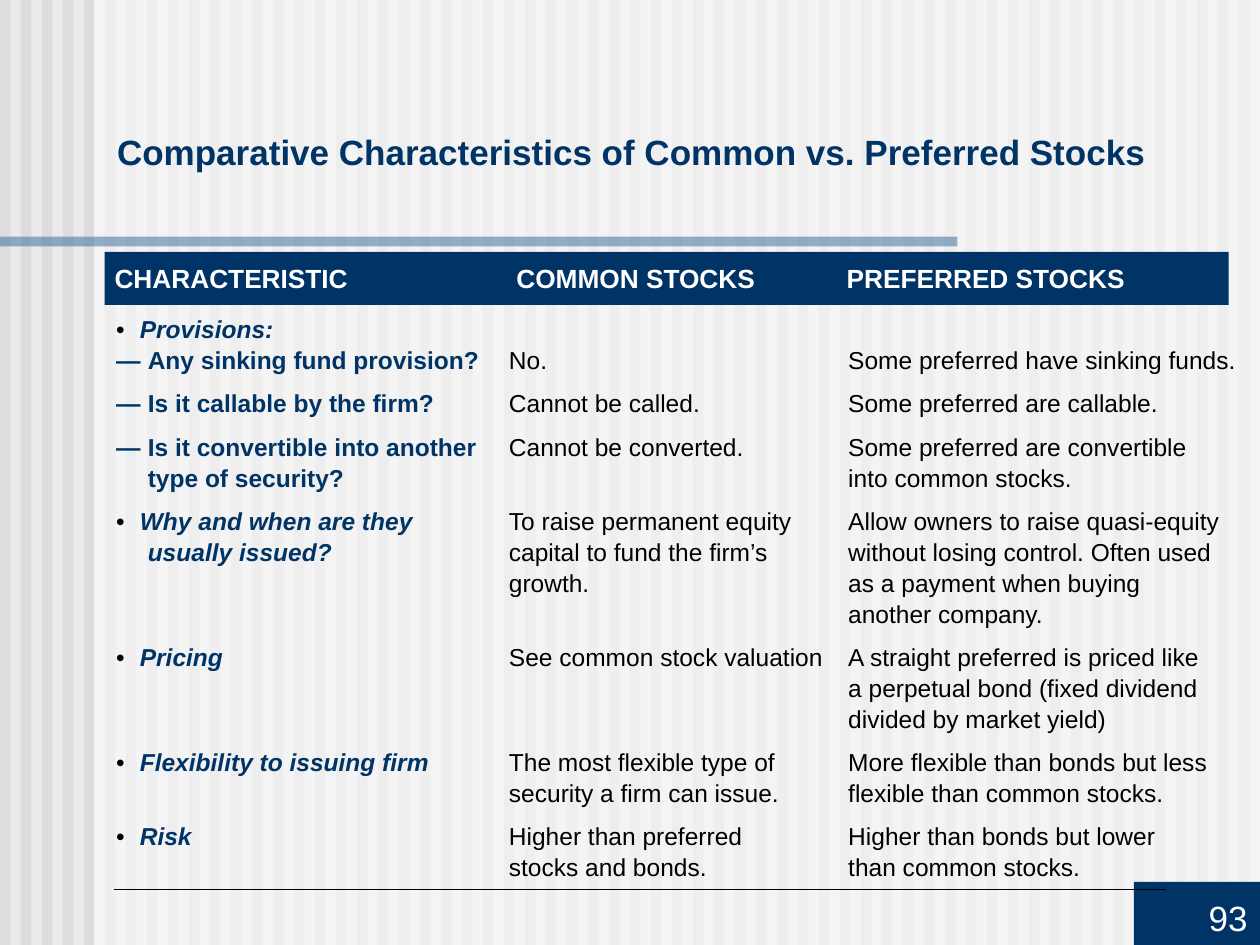
from itertools import zip_longest
from lxml import etree
from pptx import Presentation, util as u
from pptx.dml.color import RGBColor
from pptx.enum import shapes, text
from pptx.oxml.ns import qn

NAVY, STEEL, WHITE, BLACK = "003366", "336699", "FFFFFF", "000000"
WIDTH, HEIGHT = 25.4, 19.05
STRIPE_COUNT = 60

TITLE = "Comparative Characteristics of Common vs. Preferred Stocks"
PAGE_NUMBER = "93"
HEADINGS = ["CHARACTERISTIC", "COMMON STOCKS", "PREFERRED STOCKS"]
HEADING_TABS = [8.1, 14.76]
BODY_TABS = [0.48, 0.64, 7.92, 14.76]

# mark, characteristic, common stocks, preferred stocks; one string a line
ROWS = [
    ("•", ["Provisions:"], [], []),
    ("—", ["Any sinking fund provision?"], ["No."],
     ["Some preferred have sinking funds."]),
    ("—", ["Is it callable by the firm?"], ["Cannot be called."],
     ["Some preferred are callable."]),
    ("—", ["Is it convertible into another", "type of security?"],
     ["Cannot be converted."],
     ["Some preferred are convertible", "into common stocks."]),
    ("•", ["Why and when are they", "usually issued?"],
     ["To raise permanent equity", "capital to fund the firm’s", "growth."],
     ["Allow owners to raise quasi-equity", "without losing control. Often used",
      "as a payment when buying", "another company."]),
    ("•", ["Pricing"], ["See common stock valuation"],
     ["A straight preferred is priced like", "a perpetual bond (fixed dividend",
      "divided by market yield)"]),
    ("•", ["Flexibility to issuing firm"],
     ["The most flexible type of", "security a firm can issue."],
     ["More flexible than bonds but less", "flexible than common stocks."]),
    ("•", ["Risk"], ["Higher than preferred", "stocks and bonds."],
     ["Higher than bonds but lower", "than common stocks."]),
]


def color(value):
    return RGBColor.from_string(value)


def add_bar(slide, left, top, width, height, fill, alpha=None):
    bar = slide.shapes.add_shape(shapes.MSO_SHAPE.RECTANGLE, u.Cm(left), u.Cm(top),
                                 u.Cm(width), u.Cm(height))
    bar.shadow.inherit = False
    bar.fill.solid()
    bar.fill.fore_color.rgb = color(fill)
    bar.line.fill.background()
    if alpha is not None:
        rgb = bar._element.spPr.find(qn("a:solidFill")).find(qn("a:srgbClr"))
        etree.SubElement(rgb, qn("a:alpha"), val=str(alpha * 1000))
    return bar


def add_text_frame(slide, left, top, width, height, margin=0):
    box = slide.shapes.add_textbox(u.Cm(left), u.Cm(top), u.Cm(width), u.Cm(height))
    frame = box.text_frame
    frame.word_wrap = True
    frame.margin_left = frame.margin_right = u.Cm(margin)
    frame.margin_top = frame.margin_bottom = u.Cm(margin / 2)
    return frame


def set_tabs(paragraph, stops):
    tab_list = etree.SubElement(paragraph._p.get_or_add_pPr(), qn("a:tabLst"))
    for stop in stops:
        etree.SubElement(tab_list, qn("a:tab"), pos=str(u.Cm(stop)), algn="l")


def set_font(paragraph, size, fill, bold=False):
    font = paragraph.font
    font.name, font.size, font.bold = "Arial", u.Pt(size), bold
    font.color.rgb = color(fill)


def add_background(slide):
    slide.background.fill.solid()
    slide.background.fill.fore_color.rgb = color("EAEAEA")
    pitch = WIDTH / STRIPE_COUNT
    for i in range(STRIPE_COUNT):
        add_bar(slide, i * pitch, 0, pitch / 2, HEIGHT, "DDDDDD")
    add_bar(slide, 1.9, 0, WIDTH - 1.9, HEIGHT, WHITE, alpha=50)
    add_bar(slide, 0, 4.77, 19.3, 0.2, STEEL, alpha=50)


def add_page_number(slide):
    frame = add_bar(slide, 22.86, 17.78, 2.54, 1.27, NAVY).text_frame
    frame.vertical_anchor = text.MSO_ANCHOR.BOTTOM
    paragraph = frame.paragraphs[0]
    paragraph.text = PAGE_NUMBER
    paragraph.alignment = text.PP_ALIGN.RIGHT
    set_font(paragraph, 20, WHITE)


def add_comparison(slide):
    frame = add_text_frame(slide, 2.34, 6.3, 22.86, 11.13)
    paragraph = frame.paragraphs[0]
    previous_answered = False
    for mark, *columns in ROWS:
        for i, (label, common, preferred) in enumerate(zip_longest(*columns, fillvalue="")):
            if paragraph is None:
                paragraph = frame.add_paragraph()
            paragraph.line_spacing = 1.05
            if i == 0 and previous_answered:
                paragraph.space_before = u.Pt(7.2)
            set_tabs(paragraph, BODY_TABS)
            set_font(paragraph, 14, BLACK)
            lead = paragraph.add_run()
            lead.text = "\t\t" if i else mark + "\t"
            if mark == "—":
                lead.font.bold = True
                lead.font.color.rgb = color(NAVY)
            if label:
                run = paragraph.add_run()
                run.text = label
                run.font.bold = True
                run.font.italic = mark == "•"
                run.font.color.rgb = color(NAVY)
            answers = f"\t{common}\t{preferred}".rstrip()
            if answers:
                paragraph.add_run().text = answers
            paragraph = None
        previous_answered = bool(columns[1])


def add_headings(slide):
    add_bar(slide, 2.11, 5.08, 22.66, 1.07, NAVY)
    paragraph = add_text_frame(slide, 2.31, 5.28, 22.25, 0.64).paragraphs[0]
    paragraph.text = "\t".join(HEADINGS)
    set_tabs(paragraph, HEADING_TABS)
    set_font(paragraph, 15, WHITE, bold=True)


def add_title(slide):
    frame = add_text_frame(slide, 2.11, 2.51, 22.68, 1.09, margin=0.25)
    frame.vertical_anchor = text.MSO_ANCHOR.BOTTOM
    paragraph = frame.paragraphs[0]
    paragraph.text = TITLE
    set_font(paragraph, 20, NAVY, bold=True)


def add_footer_line(slide):
    line = slide.shapes.add_connector(shapes.MSO_CONNECTOR.STRAIGHT, u.Cm(2.29),
                                      u.Cm(17.93), u.Cm(23.5), u.Cm(17.93))
    line.line.color.rgb = color(BLACK)
    line.line.width = u.Pt(0.75)
    etree.SubElement(line._element.spPr, qn("a:effectLst"))


def main():
    presentation = Presentation()
    presentation.slide_width, presentation.slide_height = u.Cm(WIDTH), u.Cm(HEIGHT)
    slide = presentation.slides.add_slide(presentation.slide_layouts[6])
    add_background(slide)
    add_page_number(slide)
    add_headings(slide)
    add_comparison(slide)
    add_title(slide)
    add_footer_line(slide)
    presentation.save("out.pptx")


if __name__ == "__main__":
    main()
